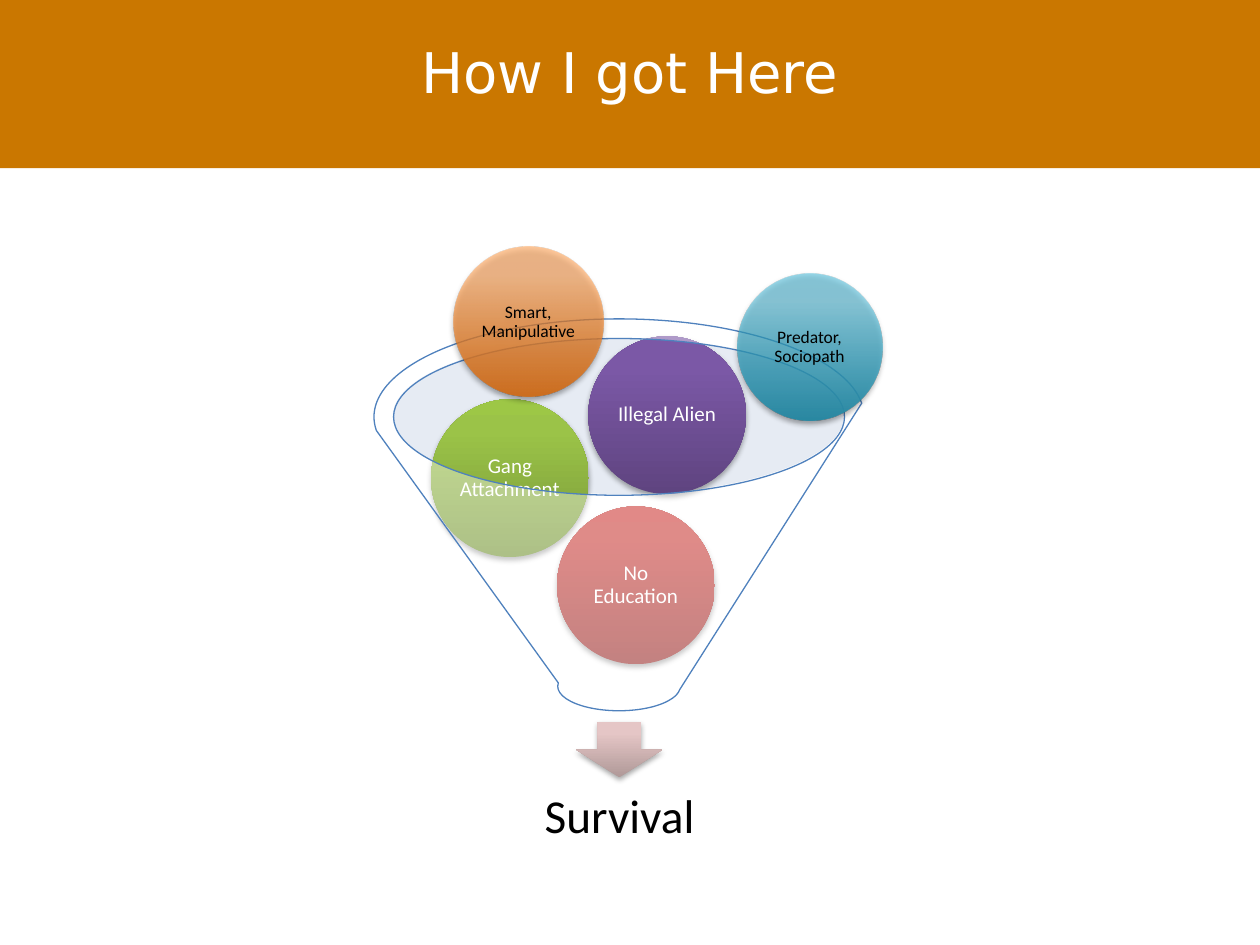
from dataclasses import dataclass

from lxml import etree
from pptx import Presentation
from pptx import util as u
from pptx.dml.color import RGBColor
from pptx.enum import shapes, text
from pptx.oxml import parse_xml
from pptx.oxml.ns import nsdecls, qn


@dataclass(frozen=True)
class Theme:
    band: str = "CA7700"
    white: str = "FFFFFF"
    black: str = "000000"
    rim: str = "C2CDE1"
    outline: str = "4F81BD"
    arrow: tuple = ("B09998", "E5C6C6", "E6C7C6")
    red: tuple = ("9C2F2D", "CB3E3A", "CE3B37")
    green: tuple = ("779737", "9BC348", "9DC746")
    purple: tuple = ("5F4480", "7B58A6", "7C57A8")
    teal: tuple = ("2A88A2", "37B1D2", "34B4D6")
    orange: tuple = ("CC6E20", "FF9034", "FF9136")
    title_font: str = "DejaVu Sans"
    body_font: str = "Calibri"
    title_size: int = 32
    result_size: int = 27
    inner_size: int = 12
    outer_size: int = 10


theme = Theme()
presentation = Presentation()
presentation.slide_width, presentation.slide_height = u.Cm(25.4), u.Cm(19.05)
slide = presentation.slides.add_slide(presentation.slide_layouts[5])


def add_filled(kind, box, colors, opacity=100):
    """Add a shape: one colour is a solid fill, three are a shaded gradient."""
    shape = slide.shapes.add_shape(kind, *(u.Cm(value) for value in box))
    shape.shadow.inherit = False
    shape.line.fill.background()
    if isinstance(colors, str):
        shape.fill.solid()
        shape.fill.fore_color.rgb = RGBColor.from_string(colors)
        if opacity < 100:
            color = shape.fill._xPr.find(qn("a:solidFill"))[0]
            etree.SubElement(color, qn("a:alpha"), val=str(opacity * 1000))
        return shape
    stops = "".join(
        f'<a:gs pos="{position * 1000}"><a:srgbClr val="{color}">'
        f'<a:alpha val="{alpha * 1000}"/></a:srgbClr></a:gs>'
        for position, color, alpha in zip((0, 80, 100), colors, (100, opacity, opacity)))
    properties = shape._element.spPr
    properties.find(qn("a:prstGeom")).addnext(parse_xml(
        f'<a:gradFill {nsdecls("a")} rotWithShape="1"><a:gsLst>{stops}</a:gsLst>'
        '<a:lin ang="16200000" scaled="0"/></a:gradFill>'))
    properties.find(qn("a:effectLst")).append(parse_xml(
        f'<a:outerShdw {nsdecls("a")} blurRad="40000" dist="23000" dir="5400000" '
        f'rotWithShape="0"><a:srgbClr val="{theme.black}"><a:alpha val="35000"/>'
        '</a:srgbClr></a:outerShdw>'))
    return shape


def write(shape, words, font, size, color, spacing, inset):
    """Put one centred line of text in a shape."""
    frame = shape.text_frame
    frame.word_wrap = True
    frame.vertical_anchor = text.MSO_ANCHOR.MIDDLE
    frame.margin_left = frame.margin_right = u.Cm(inset)
    frame.margin_top = frame.margin_bottom = u.Cm(inset)
    paragraph = frame.paragraphs[0]
    paragraph.alignment = text.PP_ALIGN.CENTER
    paragraph.line_spacing = spacing
    run = paragraph.add_run()
    run.text = words
    run.font.name, run.font.size = font, u.Pt(size)
    run.font.color.rgb = RGBColor.from_string(color)


# Title on its band, with the band behind the placeholder
band = add_filled(shapes.MSO_SHAPE.RECTANGLE, (0, 0, 25.4, 3.39), theme.band)
title = slide.shapes.title
title._element.addprevious(band._element)
title.left, title.top = u.Cm(1.27), u.Cm(0.43)
title.width, title.height = u.Cm(22.86), u.Cm(2.46)
write(title, "How I got Here", theme.title_font, theme.title_size,
      theme.white, u.Pt(25), 0.13)

# Funnel mouth, arrow and result
oval = shapes.MSO_SHAPE.OVAL
add_filled(oval, (7.92, 6.81, 9.09, 3.15), theme.rim, 40)
add_filled(shapes.MSO_SHAPE.DOWN_ARROW, (11.61, 14.55, 1.75, 1.12), theme.arrow)
result = slide.shapes.add_textbox(u.Cm(8.26), u.Cm(15.44), u.Cm(8.46), u.Cm(2.11))
write(result, "Survival", theme.body_font, theme.result_size, theme.black, 0.9, 0.53)

# Circles inside the funnel
for words, left, top, colors in (
        ("No Education", 11.23, 10.21, theme.red),
        ("Gang Attachment", 8.69, 8.05, theme.green),
        ("Illegal Alien", 11.86, 6.78, theme.purple)):
    circle = add_filled(oval, (left, top, 3.18, 3.18), colors)
    write(circle, words, theme.body_font, theme.inner_size, theme.white, 0.9, 0.04)

# Funnel in front of them
funnel = add_filled(shapes.MSO_SHAPE.FUNNEL, (7.54, 6.43, 9.88, 7.9), theme.white, 40)
funnel.line.color.rgb = RGBColor.from_string(theme.outline)
funnel.line.width = u.Pt(0.75)

# Circles above the funnel
for words, box, colors in (
        ("Predator, Sociopath", (14.86, 5.51, 2.92, 2.97), theme.teal),
        ("Smart, Manipulative", (9.14, 4.98, 3.02, 3.02), theme.orange)):
    circle = add_filled(oval, box, colors, 50)
    write(circle, words, theme.body_font, theme.outer_size, theme.black, 0.9, 0.1)

presentation.save("out.pptx")
